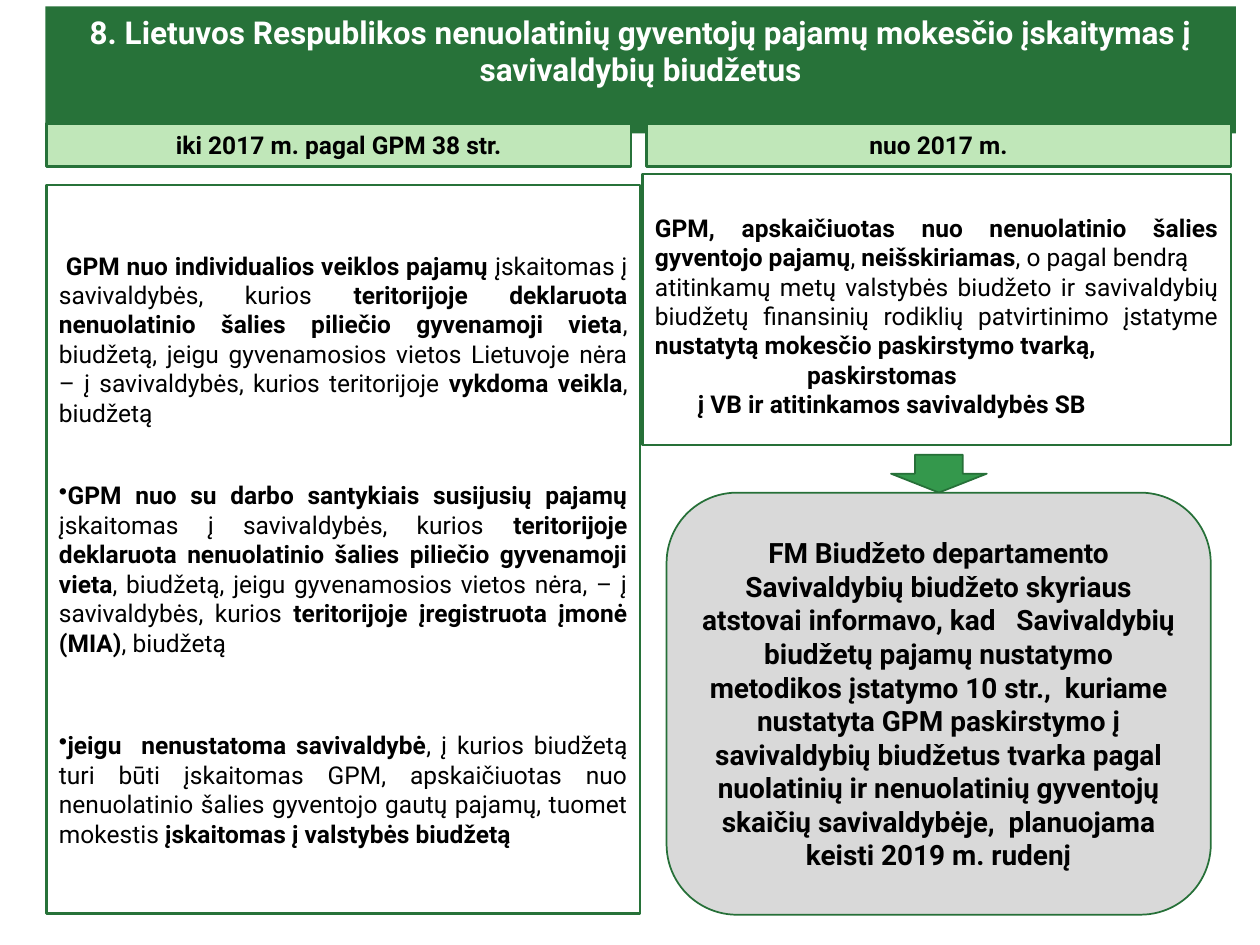
from pptx import Presentation
from pptx.dml.color import RGBColor
from pptx.enum.shapes import MSO_SHAPE
from pptx.enum.text import MSO_ANCHOR, MSO_AUTO_SIZE, PP_ALIGN
from pptx.oxml.ns import qn
from pptx.util import Pt
from lxml.etree import SubElement

FONT = "Roboto"
HUES = {
    "dark": "277239", "edge": "267038", "mint": "C0E7B9", "leaf": "34984C",
    "grey": "D9D9D9", "white": "FFFFFF", "black": "000000",
}
TITLE = ("8. Lietuvos Respublikos nenuolatinių gyventojų pajamų mokesčio "
         "įskaitymas į savivaldybių biudžetus")
HEADS = ["iki 2017 m. pagal GPM 38 str.", "nuo 2017 m."]
BEFORE = [
    {"indent": 4, "runs": [
        ("GPM nuo individualios veiklos pajamų ", True),
        ("įskaitomas į savivaldybės, kurios ", False),
        ("teritorijoje deklaruota nenuolatinio šalies piliečio gyvenamoji vieta", True),
        (", biudžetą, jeigu gyvenamosios vietos Lietuvoje nėra – į savivaldybės, "
         "kurios teritorijoje ", False),
        ("vykdoma veikla", True),
        (", biudžetą", False)]},
    {"indent": -22.3, "bullet": "•", "space": 30.5, "runs": [
        ("GPM nuo su darbo santykiais susijusių pajamų ", True),
        ("įskaitomas į savivaldybės, kurios ", False),
        ("teritorijoje deklaruota nenuolatinio šalies piliečio gyvenamoji vieta", True),
        (", biudžetą, jeigu gyvenamosios vietos nėra, – į savivaldybės, kurios ", False),
        ("teritorijoje įregistruota įmonė (MIA)", True),
        (", biudžetą", False)]},
    {"indent": -22.3, "bullet": "•", "space": 42, "runs": [
        ("jeigu  nenustatoma savivaldybė", True),
        (", į kurios biudžetą turi būti įskaitomas GPM, apskaičiuotas nuo nenuolatinio "
         "šalies gyventojo gautų pajamų, tuomet mokestis ", False),
        ("įskaitomas į valstybės biudžetą", True)]},
]
AFTER = [
    {"runs": [
        ("GPM, apskaičiuotas nuo nenuolatinio šalies gyventojo pajamų", True),
        (", ", False),
        ("neišskiriamas", True),
        (", o pagal bendrą", False)]},
    {"runs": [
        ("atitinkamų metų valstybės biudžeto ir savivaldybių biudžetų finansinių "
         "rodiklių patvirtinimo įstatyme ", False),
        ("nustatytą mokesčio paskirstymo tvarką,", True)]},
    {"left": 87, "runs": [("paskirstomas", True)]},
    {"left": 24.5, "runs": [("į VB ir atitinkamos savivaldybės SB", True)]},
]
NOTE = ("FM Biudžeto departamento Savivaldybių biudžeto skyriaus atstovai informavo, "
        "kad   Savivaldybių biudžetų pajamų nustatymo metodikos įstatymo 10 str.,  "
        "kuriame nustatyta GPM paskirstymo į savivaldybių biudžetus tvarka pagal "
        "nuolatinių ir nenuolatinių gyventojų skaičių savivaldybėje,  planuojama "
        "keisti 2019 m. rudenį")


def hue(name):
    return RGBColor.from_string(HUES[name])


def plain(text):
    return [{"runs": [(text, True)]}]


def write(shape, paras, size, ink="black", align=PP_ALIGN.CENTER, anchor=MSO_ANCHOR.MIDDLE):
    frame = shape.text_frame
    frame.word_wrap = True
    frame.auto_size = MSO_AUTO_SIZE.NONE
    frame.vertical_anchor = anchor
    frame.margin_left = frame.margin_right = Pt(7.2)
    frame.margin_top = frame.margin_bottom = Pt(3.6)
    for i, item in enumerate(paras):
        para = frame.add_paragraph() if i else frame.paragraphs[0]
        para.alignment = align
        para.space_before = Pt(item.get("space", 0))
        props = para._p.get_or_add_pPr()
        props.set("marL", str(Pt(item.get("left", 0))))
        props.set("indent", str(Pt(item.get("indent", 0))))
        if "bullet" in item:
            SubElement(props, qn("a:buChar")).set("char", item["bullet"])
        for text, bold in item["runs"]:
            run = para.add_run()
            run.text = text
            font = run.font
            font.name, font.size, font.bold = FONT, Pt(size), bold
            font.color.rgb = hue(ink)


def place(shape, box):
    shape.left, shape.top, shape.width, shape.height = map(Pt, box)


def draw(slide, kind, box, fill, line, width):
    shape = slide.shapes.add_shape(kind, *map(Pt, box))
    shape.shadow.inherit = False
    if fill:
        shape.fill.solid()
        shape.fill.fore_color.rgb = hue(fill)
    else:
        shape.fill.background()
    shape.line.color.rgb = hue(line)
    shape.line.width = Pt(width)
    return shape


def main():
    """Build the slide on crediting non-residents' income tax to budgets."""
    deck = Presentation()
    deck.slide_width, deck.slide_height = Pt(720), Pt(540)
    slide = deck.slides.add_slide(deck.slide_layouts[5])

    title = slide.shapes.title
    place(title, (25.9, 3.6, 680.4, 72.7))
    title.fill.solid()
    title.fill.fore_color.rgb = hue("dark")
    write(title, plain(TITLE), 18, "white", anchor=MSO_ANCHOR.TOP)

    rect = MSO_SHAPE.RECTANGLE
    right = draw(slide, rect, (367.2, 99.4, 336.2, 154.8), None, "edge", 1.5)
    write(right, AFTER, 14, align=PP_ALIGN.JUSTIFY)
    right.text_frame.margin_top = Pt(10.6)
    left = draw(slide, rect, (26.6, 105.8, 339.1, 416.2), None, "dark", 1.5)
    write(left, BEFORE, 14, align=PP_ALIGN.JUSTIFY)

    for i, text in enumerate(HEADS):
        head = draw(slide, rect, (26.6 + i * 342.7, 70.6, 334.1, 24.5), "mint", "dark", 1.5)
        write(head, plain(text), 14)

    draw(slide, MSO_SHAPE.DOWN_ARROW, (509.2, 259.9, 54.7, 21.6), "leaf", "edge", 1)
    note = draw(slide, MSO_SHAPE.ROUNDED_RECTANGLE, (380.9, 281.5, 311, 241.2),
                "grey", "edge", 1)
    write(note, plain(NOTE), 16)

    deck.save("out.pptx")


if __name__ == "__main__":
    main()
